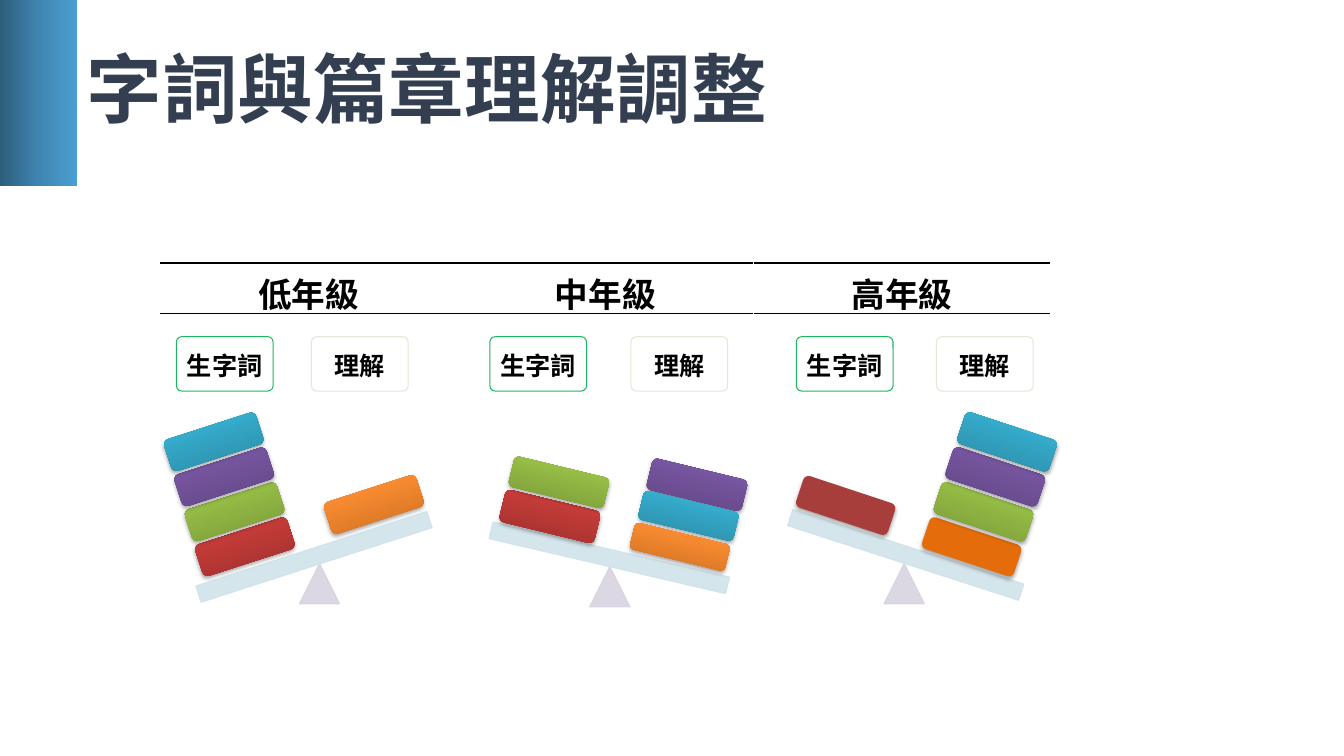
from dataclasses import dataclass

from lxml.etree import SubElement as Sub
from pptx import Presentation
from pptx.dml.color import RGBColor as Rgb
from pptx.enum.shapes import MSO_SHAPE as Kind
from pptx.enum.text import MSO_ANCHOR as Anchor, PP_ALIGN as Align
from pptx.oxml.ns import qn
from pptx.util import Inches, Pt

# Grid: ten columns and ten rows to the inch
UNIT = Inches(0.1)
WIDE, HIGH = 133.33, 75
FONT = "Noto Sans CJK SC"

# Colours: one stop is a flat fill, three stops are a gradient
BLACK = Rgb(0x00, 0x00, 0x00)
WHITE = Rgb(0xFF, 0xFF, 0xFF)
NAVY = Rgb(0x33, 0x3F, 0x50)
LEAF = Rgb(0x00, 0xB0, 0x50)
PALE = Rgb(0xDE, 0xE7, 0xD1)
LILAC = Rgb(0xD8, 0xD3, 0xE0)
ICE = Rgb(0xD0, 0xE3, 0xEA)
BLUE = (Rgb(0x2C, 0x5E, 0x7C), Rgb(0x3F, 0x85, 0xB1), Rgb(0x4A, 0x9E, 0xD2))
RED = (Rgb(0x9C, 0x2F, 0x2D), Rgb(0xCB, 0x3E, 0x3A), Rgb(0xCE, 0x3B, 0x37))
GREEN = (Rgb(0x77, 0x97, 0x37), Rgb(0x9B, 0xC3, 0x48), Rgb(0x9D, 0xC7, 0x46))
PLUM = (Rgb(0x5F, 0x44, 0x80), Rgb(0x7B, 0x58, 0xA6), Rgb(0x7C, 0x57, 0xA8))
TEAL = (Rgb(0x2A, 0x88, 0xA2), Rgb(0x37, 0xB1, 0xD2), Rgb(0x34, 0xB4, 0xD6))
AMBER = (Rgb(0xCC, 0x6E, 0x20), Rgb(0xFF, 0x90, 0x34), Rgb(0xFF, 0x91, 0x36))
RUST = (Rgb(0xA7, 0x3E, 0x3B),)
FLAME = (Rgb(0xE4, 0x6C, 0x0A),)


@dataclass
class Box:
    x: float
    y: float
    w: float
    h: float

    def emu(self) -> list[int]:
        return [round(v * UNIT) for v in (self.x, self.y, self.w, self.h)]


@dataclass
class Pile:
    """Blocks from the first one on, each shifted by (dx, dy) and grown by dh."""
    first: Box
    tilt: float
    hues: list[tuple]
    dx: float = 0
    dy: float = 0
    dh: float = 0


@dataclass
class Scale:
    grade: str
    words: float  # left edge of the 生字詞 label
    sense: float  # left edge of the 理解 label
    foot: tuple[float, float]
    beam: tuple[float, float]
    tilt: float
    piles: list[Pile]


SCALES = [
    Scale("低年級", 17.5, 30.9, (29.7, 55.9), (19.1, 54.4), -17.9, [
        Pile(Box(19.5, 52.6, 9.6, 3.3), -17.9, [RED, GREEN, PLUM, TEAL], -1.03, -3.47),
        Pile(Box(32.3, 48.4, 9.6, 3.3), -17.9, [AMBER])]),
    Scale("中年級", 48.6, 62.6, (58.5, 56.2), (48.4, 54.5), 13.1, [
        Pile(Box(49.7, 49.6, 9.7, 3.3), 13.6, [RED, GREEN], 0.9, -3.3, -0.2),
        Pile(Box(64.3, 46.5, 9.7, 3.2), 13.6, [PLUM, TEAL, AMBER], -0.85, 3.2, -0.25)]),
    Scale("高年級", 79, 92.9, (87.7, 55.9), (77.8, 54.2), 17.9, [
        Pile(Box(91.6, 52.6, 9.6, 3.3), 18.3, [FLAME, GREEN, PLUM, TEAL], 1.17, -3.47),
        Pile(Box(79.1, 48.5, 9.6, 3.3), 18.3, [RUST])]),
]


def write(frame, text: str, size: float, hue: Rgb, align=Align.CENTER):
    frame.text = text
    para = frame.paragraphs[0]
    para.alignment = align
    font = para.runs[0].font
    font.name, font.size, font.bold = FONT, Pt(size), True
    font.color.rgb = hue
    Sub(font._element, qn("a:ea"), typeface=FONT)
    return para


def paint(shape, hues: tuple, mid: int, angle: float) -> None:
    fill = shape.fill
    if len(hues) == 1:
        fill.solid()
        fill.fore_color.rgb = hues[0]
        return
    fill.gradient()
    fill.gradient_angle = angle
    stops = shape._element.spPr.find(qn("a:gradFill")).find(qn("a:gsLst"))
    stops[:] = []
    for share, hue in zip((0, mid, 100), hues):
        stop = Sub(stops, qn("a:gs"), pos=str(share * 1000))
        Sub(stop, qn("a:srgbClr"), val=str(hue))


def add_solid(shapes, kind: Kind, box: Box, hues: tuple, mid=80, angle=90, tilt=0.0):
    shape = shapes.add_shape(kind, *box.emu())
    shape.shadow.inherit = False
    shape.rotation = tilt
    shape.line.fill.background()
    paint(shape, hues, mid, angle)
    return shape


def add_glass(shapes, kind: Kind, box: Box, hue: Rgb, edge: Rgb, tilt=0.0):
    """A part at 90 % opacity with a thin edge."""
    shape = add_solid(shapes, kind, box, (hue,), tilt=tilt)
    shape.line.color.rgb = edge
    shape.line.width = Pt(0.75)
    for tint in shape._element.spPr.iter(qn("a:srgbClr")):
        Sub(tint, qn("a:alpha"), val="90000")
    return shape


def add_label(shapes, x: float, text: str, edge: Rgb) -> None:
    shape = add_glass(shapes, Kind.ROUNDED_RECTANGLE, Box(x, 33.4, 9.6, 5.4), WHITE, edge)
    shape.adjustments[0] = 0.1
    frame = shape.text_frame
    frame.margin_left = frame.margin_right = Inches(0.07)
    frame.margin_top = frame.margin_bottom = Inches(0.07)
    frame.vertical_anchor = Anchor.MIDDLE
    write(frame, text, 18, BLACK).line_spacing = Pt(24)


def add_pile(shapes, pile: Pile) -> None:
    base = pile.first
    for i, hues in enumerate(pile.hues):
        box = Box(base.x + i * pile.dx, base.y + i * pile.dy, base.w, base.h + i * pile.dh)
        block = add_solid(shapes, Kind.ROUNDED_RECTANGLE, box, hues, tilt=pile.tilt)
        glow = block._element.spPr.find(qn("a:effectLst"))
        cast = Sub(glow, qn("a:outerShdw"), blurRad=str(Pt(3.1)), dist=str(Pt(1.8)),
                   dir="5400000", rotWithShape="0")
        Sub(Sub(cast, qn("a:srgbClr"), val=str(BLACK)), qn("a:alpha"), val="35000")


def add_scale(shapes, scale: Scale) -> None:
    parts = shapes.add_group_shape().shapes
    add_label(parts, scale.words, "生字詞", LEAF)
    add_label(parts, scale.sense, "理解", PALE)
    add_glass(parts, Kind.ISOSCELES_TRIANGLE, Box(*scale.foot, 4, 4), LILAC, LILAC)
    add_glass(parts, Kind.RECTANGLE, Box(*scale.beam, 24.1, 1.7), ICE, ICE, scale.tilt)
    for pile in scale.piles:
        add_pile(parts, pile)


def add_head(shapes, box: Box, text: str) -> None:
    table = shapes.add_table(1, 1, *box.emu()).table
    table.first_row = table.horz_banding = False
    cell = table.cell(0, 0)
    write(cell.text_frame, text, 24, BLACK)
    props = cell._tc.get_or_add_tcPr()
    for side in ("lnL", "lnR", "lnT", "lnB"):
        line = Sub(props, qn("a:" + side), w=str(Pt(1)))
        if side in ("lnT", "lnB"):
            Sub(Sub(line, qn("a:solidFill")), qn("a:srgbClr"), val=str(BLACK))
        else:
            Sub(line, qn("a:noFill"))
    cell.fill.background()


def main() -> None:
    deck = Presentation()
    deck.slide_width, deck.slide_height = round(WIDE * UNIT), HIGH * UNIT
    shapes = deck.slides.add_slide(deck.slide_layouts[6]).shapes

    # Side band and title
    add_solid(shapes, Kind.RECTANGLE, Box(0, 0, 7.6, 18.5), BLUE, mid=50, angle=0)
    frame = shapes.add_textbox(*Box(7.6, 0, 115, 18.5).emu()).text_frame
    frame.word_wrap = True
    frame.vertical_anchor = Anchor.MIDDLE
    write(frame, "字詞與篇章理解調整", 54, NAVY, Align.LEFT).line_spacing = 0.9

    # One heading and one seesaw for each grade
    for i, scale in enumerate(SCALES):
        add_head(shapes, Box(15.9 + i * 29.45, 26.1, 29.4, 5), scale.grade)
        add_scale(shapes, scale)

    deck.save("out.pptx")


if __name__ == "__main__":
    main()
